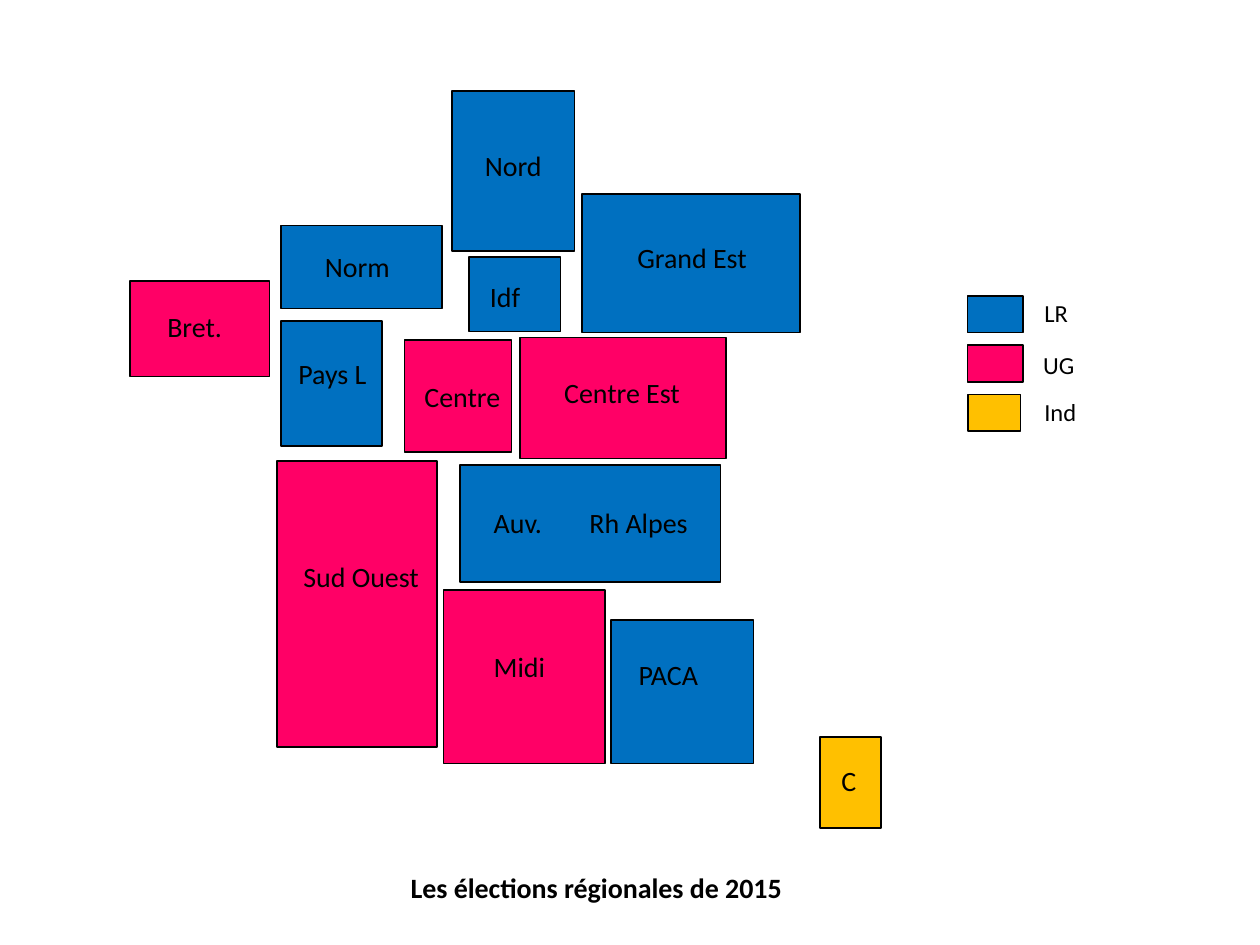
from dataclasses import dataclass

from pptx import Presentation
from pptx.dml.color import RGBColor
from pptx.enum.shapes import MSO_SHAPE
from pptx.enum.text import MSO_ANCHOR, MSO_AUTO_SIZE, PP_ALIGN
from pptx.util import Inches, Pt

COLUMNS, ROWS = 100, 75
CELL = Inches(10) // COLUMNS


@dataclass(frozen=True)
class Theme:
    font: str = "Calibri"
    ink: str = "000000"
    right: str = "0070C0"
    left: str = "FF0066"
    independent: str = "FFC000"
    label_size: int = 16
    legend_size: int = 14
    outline: int = 1


@dataclass(frozen=True)
class Box:
    column: float
    row: float
    width: float
    height: float

    def within(self, column, row, width, height):
        return Box(self.column + column, self.row + row, width, height)

    def place(self):
        return [round(CELL * share) for share in (self.column, self.row, self.width, self.height)]


THEME = Theme()
LABEL_HEIGHT = 3.7

REGIONS = [
    ("right", (12.3, 18.3, 8, 9.9), [("Pays L", 12.7, 20.6, 7.5)]),
    ("right", (27.2, 13.2, 7.3, 5.9), [("Idf", 27.9, 14.5, 4.4)]),
    ("right", (38.5, 42, 11.3, 11.4), [("PACA", 39.7, 44.5, 6.8)]),
    ("right", (25.9, 0, 9.7, 12.7), [("Nord", 27.5, 4.1, 6.6)]),
    ("right", (36.2, 8.2, 17.3, 11), [("Grand Est", 39.6, 11.4, 10.8)]),
    ("right", (26.5, 29.7, 20.7, 9.3), [("Auv.", 28.2, 32.4, 5.9), ("Rh Alpes", 35.8, 32.4, 9.9)]),
    ("right", (12.3, 10.7, 12.8, 6.6), [("Norm", 14.8, 12.1, 7.2)]),
    ("left", (0.3, 15.1, 11.1, 7.6), [("Bret.", 2.3, 16.9, 6.4)]),
    ("left", (22.1, 19.8, 8.5, 8.9), [("Centre", 22.7, 22.4, 8.1)]),
    ("independent", (55.1, 51.3, 4.8, 7.2), [("C", 55.8, 52.9, 3.2)]),
    ("left", (31.3, 19.6, 16.3, 9.6), [("Centre Est", 33.8, 22.1, 11.3)]),
    ("left", (25.2, 39.6, 12.8, 13.8), [("Midi", 28.2, 43.9, 6.1)]),
    ("left", (12, 29.4, 12.7, 22.7), [("Sud Ouest", 13.1, 36.7, 11.3)]),
]

LEGEND = [
    ("LR", "right", 4.4, (5.1, -0.3, 3.9)),
    ("UG", "left", 4.4, (5, -0.1, 4.5)),
    ("Ind", "independent", 4.2, (5.1, -0.3, 4.6)),
]


def add_block(page, box, party):
    block = page.shapes.add_shape(MSO_SHAPE.RECTANGLE, *box.place())
    block.shadow.inherit = False
    block.fill.solid()
    block.fill.fore_color.rgb = RGBColor.from_string(getattr(THEME, party))
    block.line.color.rgb = RGBColor.from_string(THEME.ink)
    block.line.width = Pt(THEME.outline)


def add_label(page, box, text, size=THEME.label_size, bold=False):
    frame = page.shapes.add_textbox(*box.place()).text_frame
    frame.word_wrap = False
    frame.auto_size = MSO_AUTO_SIZE.SHAPE_TO_FIT_TEXT
    frame.vertical_anchor = MSO_ANCHOR.TOP
    frame.text = text
    para = frame.paragraphs[0]
    para.alignment = PP_ALIGN.LEFT
    span = para.runs[0]
    span.font.name = THEME.font
    span.font.size = Pt(size)
    span.font.bold = bold
    span.font.color.rgb = RGBColor.from_string(THEME.ink)


def add_map(page, box):
    for party, area, labels in REGIONS:
        add_block(page, box.within(*area), party)
    for party, area, labels in REGIONS:
        for text, column, row, width in labels:
            add_label(page, box.within(column, row, width, LABEL_HEIGHT), text)


def add_legend(page, box):
    pitch = box.height / len(LEGEND)
    for index, (text, party, width, (column, shift, label_width)) in enumerate(LEGEND):
        row = index * pitch
        add_block(page, box.within(0, row, width, 2.9), party)
        label_box = box.within(column, row + shift, label_width, 3.4)
        add_label(page, label_box, text, THEME.legend_size)


def main():
    deck = Presentation()
    deck.slide_width = CELL * COLUMNS
    deck.slide_height = CELL * ROWS
    page = deck.slides.add_slide(deck.slide_layouts[6])
    add_map(page, Box(10, 7.2, 60, 58.5))
    add_legend(page, Box(76.8, 23.5, 9.7, 11.7))
    add_label(page, Box(31.6, 68.6, 31.9, LABEL_HEIGHT), "Les élections régionales de 2015", bold=True)
    deck.save("out.pptx")


if __name__ == "__main__":
    main()
